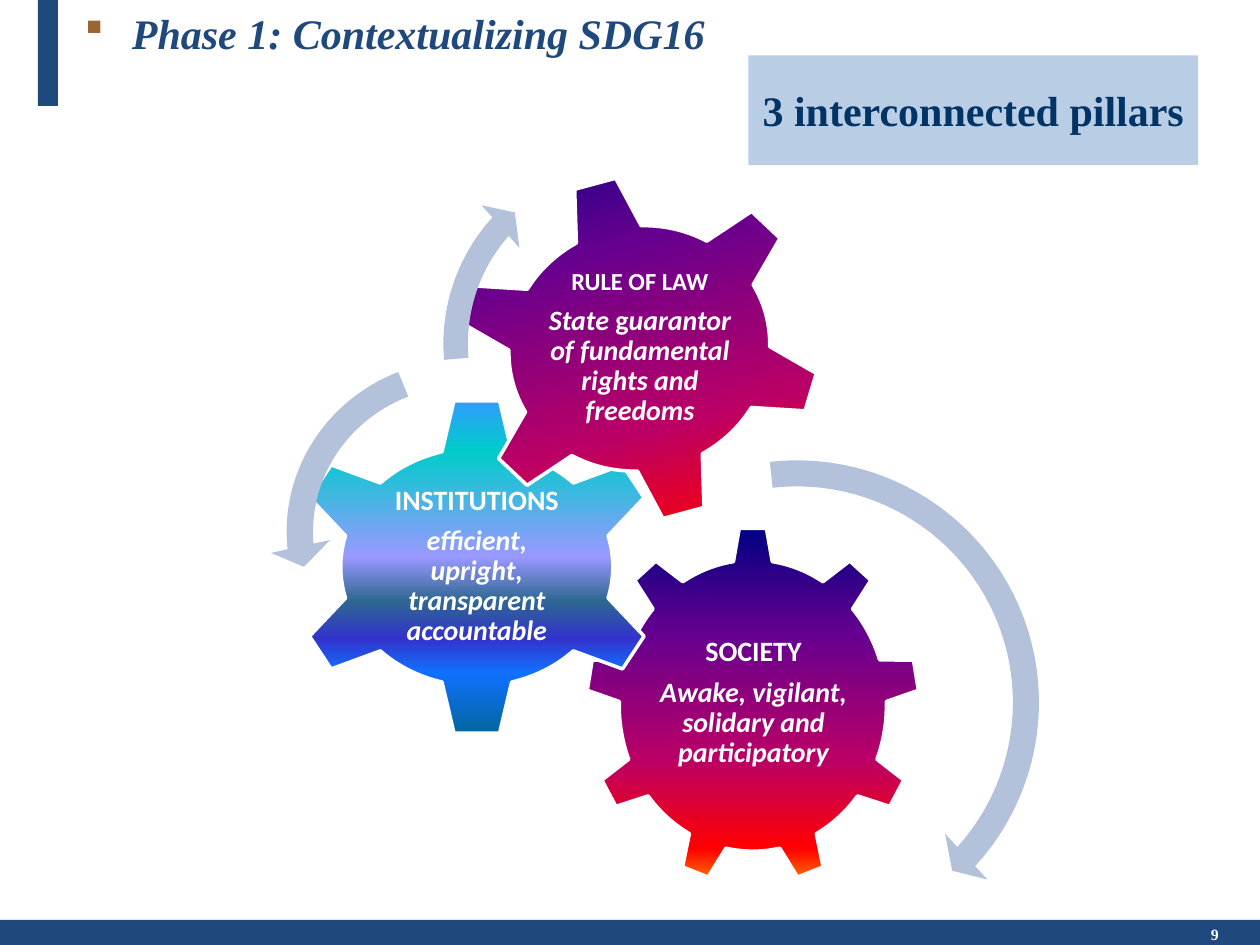
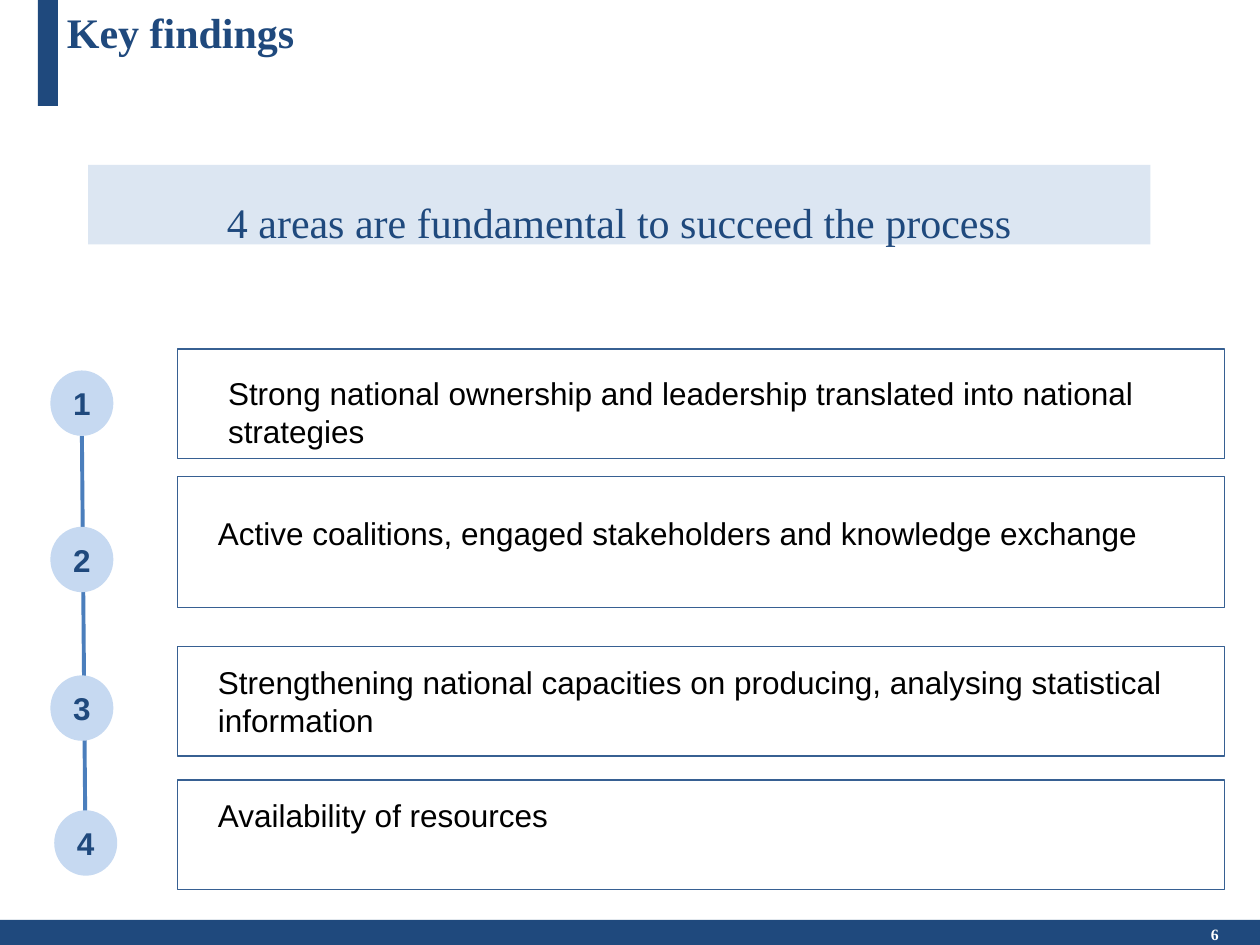
from dataclasses import dataclass

from lxml.etree import SubElement
from pptx import Presentation
from pptx.dml.color import RGBColor
from pptx.enum.shapes import MSO_CONNECTOR as Connector
from pptx.enum.shapes import MSO_SHAPE as Preset
from pptx.enum.text import MSO_ANCHOR as Anchor
from pptx.enum.text import MSO_AUTO_SIZE as AutoSize
from pptx.enum.text import PP_ALIGN as Align
from pptx.oxml.ns import qn
from pptx.util import Pt

NAVY = "1F497D"
WHITE = "FFFFFF"
BLACK = "000000"
BULLET_BROWN = "996633"
PILLAR_FILL = "B9CDE5"
PILLAR_TEXT = "003366"
ARROW_FILL = "B3C1DB"
BANNER_FILL = "DCE6F2"
CARD_LINE = "376092"
STEP_FILL = "C6D9F1"
STEP_LINE = "4B7EBC"
SERIF = "Times New Roman"
SUNSET = [(0, "000082"), (30, "66008F"), (65, "BA0066"), (90, "FF0000"), (100, "FF8200")]
OCEAN = [(0, "3399FF"), (16, "00CCCC"), (47, "9999FF"), (60, "2E6792"),
         (71, "3333CC"), (81, "1170FF"), (100, "006699")]
Box = tuple[float, float, float, float]


@dataclass
class Gear:
    preset: Preset
    box: Box
    text_box: Box
    stops: list[tuple[int, str]]
    heading: str
    body: list[tuple[str, bool]]
    heading_size: int = 16
    rotation: int = 0


@dataclass
class TurnArrow:
    preset: Preset
    box: Box
    adjustments: tuple[float, ...]


@dataclass
class Finding:
    text: str
    top: float
    height: float
    margin_left: float
    margin_top: float
    step_left: float
    step_top: float


GEARS = [
    Gear(Preset.GEAR_9, (334.8, 301, 190.8, 204.5), (373.7, 348.5, 113.8, 106.6), SUNSET,
         "SOCIETY", [("Awake, vigilant, solidary and participatory", True)]),
    Gear(Preset.GEAR_6, (165.6, 226.8, 213.8, 194.4), (217.4, 275.8, 110.2, 95.8), OCEAN,
         "INSTITUTIONS", [("efficient, upright, transparent accountable", True)]),
    Gear(Preset.GEAR_6, (260.6, 99.4, 209.5, 199.4), (307.4, 142.6, 116.6, 113), SUNSET,
         "RULE OF LAW",
         [("State ", True), ("g", False), ("uarantor of fundamental rights and freedoms", True)],
         heading_size=14, rotation=345),
]
ARROWS = [
    TurnArrow(Preset.CIRCULAR_ARROW, (306.7, 252.7, 297.4, 297.4),
              (0.05, 2.99, 25.39, 158.14, 0.06)),
    TurnArrow(Preset.LEFT_CIRCULAR_ARROW, (154.1, 195.8, 223.2, 216),
              (0.07, 4.3, 104.89, 148.38, 0.08)),
    TurnArrow(Preset.CIRCULAR_ARROW, (244.1, 79.9, 233.3, 233.3),
              (0.06, 3.94, 133.14, 105.08, 0.07)),
]
FINDINGS = [
    Finding("Strong national ownership and leadership translated into national strategies",
            199.4, 62.6, 28.8, 14.4, 28.8, 211.7),
    Finding("Active coalitions, engaged stakeholders and knowledge exchange",
            272.2, 74.9, 23, 21.6, 28.8, 301),
    Finding("Strengthening national capacities on producing, analysing statistical information",
            369.4, 62.6, 23, 9.4, 28.8, 385.9),
    Finding("Availability of resources", 445.7, 62.6, 23, 9.4, 31, 463),
]


def color(value: str) -> RGBColor:
    return RGBColor.from_string(value)


def points(box: Box) -> list[Pt]:
    return [Pt(length) for length in box]


def add_run(paragraph, text: str, *, size: float, font: str, fill: str,
            bold: bool = False, italic: bool = False) -> None:
    run = paragraph.add_run()
    run.text = text
    run.font.size = Pt(size)
    run.font.name = font
    run.font.bold = bold
    run.font.italic = italic
    run.font.color.rgb = color(fill)


def prepare_frame(shape, *, margins: Box = (7.2, 3.6, 7.2, 3.6), anchor=Anchor.TOP):
    frame = shape.text_frame
    frame.word_wrap = True
    frame.auto_size = AutoSize.NONE
    frame.vertical_anchor = anchor
    (frame.margin_left, frame.margin_top,
     frame.margin_right, frame.margin_bottom) = points(margins)
    return frame


def write(shape, text: str, *, align=Align.LEFT, spacing: float = 1, margins: Box = (7.2, 3.6, 7.2, 3.6),
          anchor=Anchor.TOP, **font):
    paragraph = prepare_frame(shape, margins=margins, anchor=anchor).paragraphs[0]
    paragraph.alignment = align
    paragraph.line_spacing = spacing
    add_run(paragraph, text, **font)
    return paragraph


def add_preset(slide, preset: Preset, box: Box, *, fill: str | None = None,
               line: str | None = None, line_width: float = 0.75):
    shape = slide.shapes.add_shape(preset, *points(box))
    shape.shadow.inherit = False
    if fill:
        shape.fill.solid()
        shape.fill.fore_color.rgb = color(fill)
    else:
        shape.fill.background()
    if line:
        shape.line.color.rgb = color(line)
        shape.line.width = Pt(line_width)
    else:
        shape.line.fill.background()
    return shape


def set_gradient(shape, stops: list[tuple[int, str]]) -> None:
    shape.fill.gradient()
    shape.fill.gradient_angle = 270
    stop_list = shape.element.spPr.find(qn("a:gradFill")).find(qn("a:gsLst"))
    for stop in list(stop_list):
        stop_list.remove(stop)
    for position, value in stops:
        stop = SubElement(stop_list, qn("a:gs"), pos=str(position * 1000))
        SubElement(stop, qn("a:srgbClr"), val=value)


def add_square_bullet(paragraph) -> None:
    properties = paragraph._p.get_or_add_pPr()
    properties.set("marL", str(Pt(31.5)))
    properties.set("indent", str(-Pt(27)))
    bullet_color = SubElement(properties, qn("a:buClr"))
    SubElement(bullet_color, qn("a:srgbClr"), val=BULLET_BROWN)
    SubElement(properties, qn("a:buFont"), typeface="Wingdings")
    SubElement(properties, qn("a:buChar"), char="§")


def start_slide(presentation, title: str, number: str, title_box: Box, *,
                margins: Box = (7.2, 3.6, 7.2, 3.6), italic: bool = False):
    slide = presentation.slides.add_slide(presentation.slide_layouts[5])
    add_preset(slide, Preset.RECTANGLE, (0, 525.6, 720, 14.4), fill=NAVY)
    add_preset(slide, Preset.RECTANGLE, (21.6, 0, 11.5, 60.5), fill=NAVY)
    heading = slide.shapes.title
    heading.left, heading.top, heading.width, heading.height = points(title_box)
    paragraph = write(heading, title, margins=margins, size=24, font=SERIF, fill=NAVY,
                      bold=True, italic=italic)
    number_box = slide.shapes.add_textbox(*points((691.9, 530.6, 28.1, 8.6)))
    write(number_box, number, margins=(0, 0, 0, 0), anchor=Anchor.BOTTOM,
          size=9, font=SERIF, fill=WHITE, bold=True)
    return slide, paragraph


def add_gear(slide, gear: Gear) -> None:
    shape = add_preset(slide, gear.preset, gear.box, line=WHITE, line_width=2)
    set_gradient(shape, gear.stops)
    shape.rotation = gear.rotation
    caption = slide.shapes.add_textbox(*points(gear.text_box))
    frame = prepare_frame(caption, margins=(1.4, 1.4, 1.4, 1.4), anchor=Anchor.MIDDLE)
    heading, body = frame.paragraphs[0], frame.add_paragraph()
    for paragraph in (heading, body):
        paragraph.alignment = Align.CENTER
        paragraph.line_spacing = 0.9
        paragraph.space_after = Pt(5.6)
    add_run(heading, gear.heading, size=gear.heading_size, font="Calibri", fill=WHITE, bold=True)
    for text, italic in gear.body:
        add_run(body, text, size=16, font="Calibri", fill=WHITE, bold=True, italic=italic)


def add_turn_arrow(slide, arrow: TurnArrow) -> None:
    shape = add_preset(slide, arrow.preset, arrow.box, fill=ARROW_FILL)
    for index, value in enumerate(arrow.adjustments):
        shape.adjustments[index] = value


def add_finding(slide, number: int, finding: Finding) -> None:
    card = add_preset(slide, Preset.RECTANGLE, (101.5, finding.top, 598.3, finding.height),
                      line=CARD_LINE)
    write(card, finding.text, margins=(finding.margin_left, finding.margin_top, 36, 0),
          size=18, font="Arial", fill=BLACK)
    step = add_preset(slide, Preset.OVAL, (finding.step_left, finding.step_top, 36, 37.4),
                      fill=STEP_FILL)
    write(step, str(number), align=Align.CENTER, margins=(0, 0, 0, 0), anchor=Anchor.MIDDLE,
          size=18, font="Arial", fill=NAVY, bold=True)


def build_pillars(presentation) -> None:
    slide, title = start_slide(presentation, "Phase 1: Contextualizing SDG16", "9",
                               (41, 0, 679, 48.2), margins=(2.9, 4.3, 8.6, 4.3), italic=True)
    add_square_bullet(title)
    label = add_preset(slide, Preset.RECTANGLE, (427.7, 31.7, 257, 62.6), fill=PILLAR_FILL)
    write(label, "3 interconnected pillars", align=Align.CENTER, margins=(0, 0, 0, 0),
          anchor=Anchor.MIDDLE, size=24, font=SERIF, fill=PILLAR_TEXT, bold=True)
    for gear in GEARS:
        add_gear(slide, gear)
    for arrow in ARROWS:
        add_turn_arrow(slide, arrow)


def build_findings(presentation) -> None:
    slide, _ = start_slide(presentation, "Key findings", "6", (31, 0, 689, 60.5))
    banner = add_preset(slide, Preset.RECTANGLE, (50.4, 94.3, 607, 45.4), fill=BANNER_FILL)
    write(banner, "4 areas are fundamental to succeed the process", align=Align.CENTER,
          spacing=1.5, size=24, font=SERIF, fill=NAVY)
    thread = slide.shapes.add_connector(Connector.STRAIGHT, *points((46.8, 249.1, 49, 499.7)))
    thread.line.color.rgb = color(STEP_LINE)
    thread.line.width = Pt(2.25)
    SubElement(thread.element.spPr, qn("a:effectLst"))
    for number, finding in enumerate(FINDINGS, start=1):
        add_finding(slide, number, finding)


def main() -> None:
    presentation = Presentation()
    presentation.slide_width = Pt(720)
    presentation.slide_height = Pt(540)
    build_pillars(presentation)
    build_findings(presentation)
    presentation.save("out.pptx")


if __name__ == "__main__":
    main()
